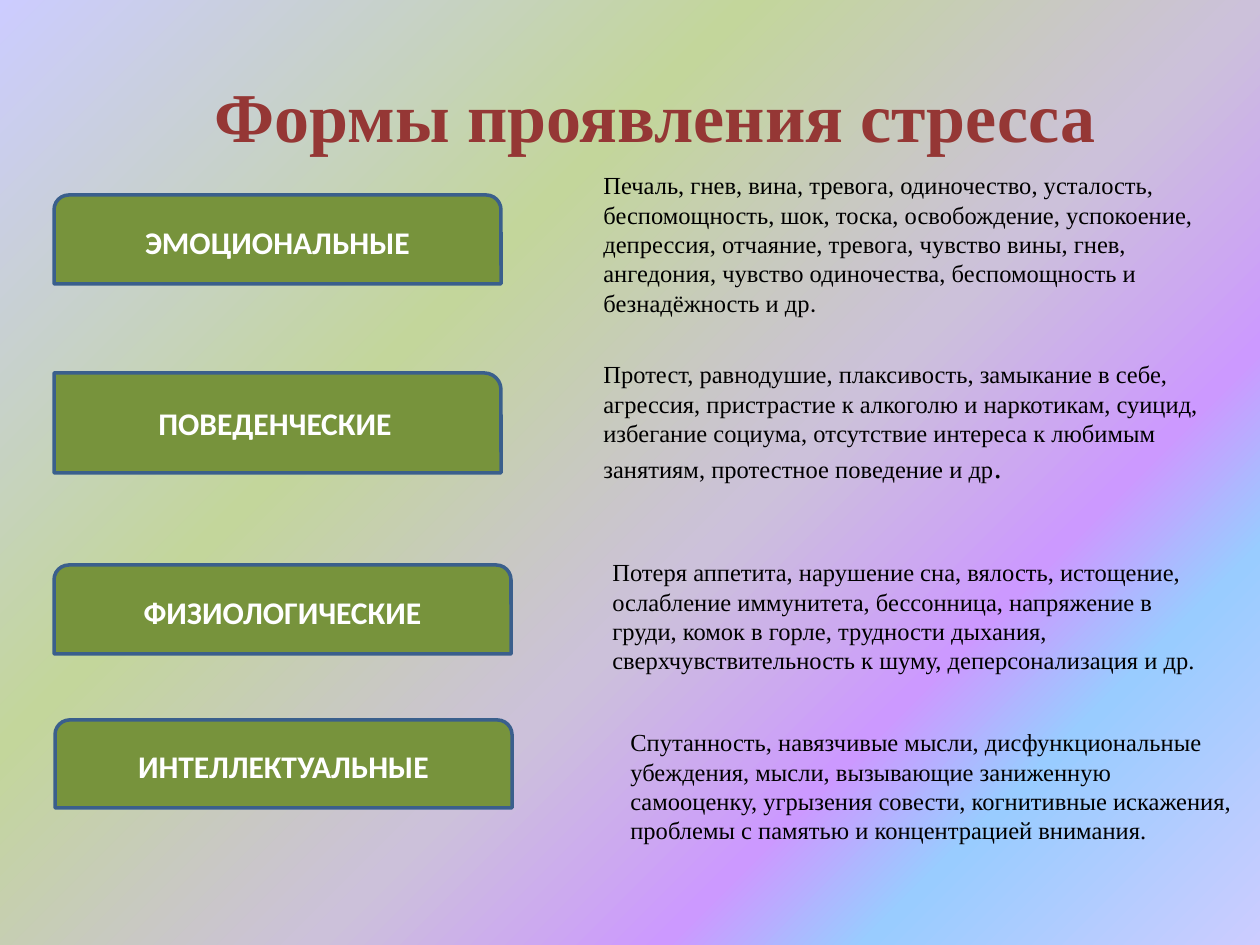
from copy import deepcopy
from dataclasses import dataclass

from pptx import Presentation
from pptx.dml.color import RGBColor
from pptx.enum.shapes import MSO_SHAPE
from pptx.enum.text import MSO_ANCHOR, MSO_AUTO_SIZE, PP_ALIGN
from pptx.oxml.ns import qn
from pptx.util import Emu, Pt

PX_PER_INCH = 126


def px(length):
    return Emu(round(length * 914400 / PX_PER_INCH))


@dataclass(frozen=True)
class Theme:
    title_color: str = "953735"
    label_fill: str = "77933C"
    label_line: str = "3A5F8C"
    label_color: str = "FFFFFF"
    body_color: str = "000000"
    serif: str = "Times New Roman"
    sans: str = "Calibri"
    title_size: int = 40
    label_size: int = 18
    body_size: int = 14
    background: tuple = (
        (0, "CCCCFF"), (34, "C3D69B"), (57, "CCC1DA"),
        (73, "CC99FF"), (82, "99CCFF"), (100, "CCCCFF"),
    )


class SlideBuilder:
    def __init__(self, slide, theme):
        self.slide = slide
        self.theme = theme

    def background(self):
        fill = self.slide.background.fill
        fill.gradient()
        fill.gradient_angle = 315
        stops = fill.gradient_stops
        first_stop = stops[0]
        first_stop.color.rgb = RGBColor.from_string(self.theme.background[0][1])
        stop_list = fill._fill._gradFill.find(qn("a:gsLst"))
        template = deepcopy(stop_list[0])
        for stop in list(stop_list):
            stop_list.remove(stop)
        for position, color in self.theme.background:
            stop = deepcopy(template)
            stop.set("pos", str(position * 1000))
            stop[0].set("val", color)
            stop_list.append(stop)

    def style(self, run, font, size, color, bold=False):
        run.font.name = font
        run.font.size = Pt(size)
        run.font.bold = bold
        run.font.color.rgb = RGBColor.from_string(color)

    def place(self, shape, box):
        shape.left, shape.top, shape.width, shape.height = map(px, box)

    def title(self, wording, box):
        heading = self.slide.shapes.title
        self.place(heading, box)
        frame = heading.text_frame
        frame.text = wording
        frame.word_wrap = False
        frame.auto_size = MSO_AUTO_SIZE.NONE
        frame.vertical_anchor = MSO_ANCHOR.TOP
        paragraph = frame.paragraphs[0]
        paragraph.alignment = PP_ALIGN.LEFT
        self.style(paragraph.runs[0], self.theme.serif, self.theme.title_size,
                   self.theme.title_color, bold=True)

    def label(self, wording, box, outline):
        label = self.slide.shapes.add_shape(outline, *map(px, box))
        label.shadow.inherit = False
        label.fill.solid()
        label.fill.fore_color.rgb = RGBColor.from_string(self.theme.label_fill)
        label.line.color.rgb = RGBColor.from_string(self.theme.label_line)
        label.line.width = Pt(2)
        frame = label.text_frame
        frame.text = wording
        frame.vertical_anchor = MSO_ANCHOR.MIDDLE
        paragraph = frame.paragraphs[0]
        paragraph.alignment = PP_ALIGN.CENTER
        self.style(paragraph.runs[0], self.theme.sans, self.theme.label_size,
                   self.theme.label_color, bold=True)

    def description(self, wording, box, stop_font=None, stop_size=None):
        theme = self.theme
        frame = self.slide.shapes.add_textbox(*map(px, box)).text_frame
        frame.word_wrap = True
        paragraph = frame.paragraphs[0]
        paragraph.text = wording
        self.style(paragraph.runs[0], theme.serif, theme.body_size, theme.body_color)
        if stop_font:
            full_stop = paragraph.add_run()
            full_stop.text = "."
            self.style(full_stop, stop_font, stop_size, theme.body_color)


def main():
    theme = Theme()
    presentation = Presentation()
    presentation.slide_width, presentation.slide_height = px(1260), px(945)
    title_only = presentation.slide_layouts[5]
    builder = SlideBuilder(presentation.slides.add_slide(title_only), theme)
    builder.background()
    builder.title("Формы проявления стресса", (202, 66, 916, 97))

    two_round, one_round = MSO_SHAPE.ROUND_2_SAME_RECTANGLE, MSO_SHAPE.ROUND_1_RECTANGLE
    stress_forms = [
        ("ЭМОЦИОНАЛЬНЫЕ", (54, 195, 447, 89), two_round,
         "Печаль, гнев, вина, тревога, одиночество, усталость, беспомощность, шок, "
         "тоска, освобождение, успокоение, депрессия, отчаяние, тревога, чувство вины, "
         "гнев, ангедония, чувство одиночества, беспомощность и безнадёжность и др",
         (591, 164, 630, 161), (theme.sans, theme.body_size)),
        ("ПОВЕДЕНЧЕСКИЕ", (54, 373, 447, 100), one_round,
         "Протест, равнодушие, плаксивость, замыкание в себе, агрессия, пристрастие "
         "к алкоголю и наркотикам, суицид, избегание социума, отсутствие интереса "
         "к любимым занятиям, протестное поведение и др",
         (591, 353, 630, 140), (theme.serif, theme.label_size)),
        ("ФИЗИОЛОГИЧЕСКИЕ", (54, 565, 457, 89), two_round,
         "Потеря аппетита, нарушение сна, вялость, истощение, ослабление иммунитета, "
         "бессонница, напряжение в груди, комок в горле, трудности дыхания, "
         "сверхчувствительность к шуму, деперсонализация и др.",
         (600, 551, 630, 131), ()),
        ("ИНТЕЛЛЕКТУАЛЬНЫЕ", (55, 720, 457, 88), two_round,
         "Спутанность, навязчивые мысли, дисфункциональные убеждения, мысли, "
         "вызывающие заниженную самооценку, угрызения совести, когнитивные искажения, "
         "проблемы с памятью и концентрацией внимания.",
         (618, 721, 630, 131), ()),
    ]
    for form, label_box, outline, signs, signs_box, full_stop in stress_forms:
        builder.label(form, label_box, outline)
        builder.description(signs, signs_box, *full_stop)

    presentation.save("out.pptx")


if __name__ == "__main__":
    main()
